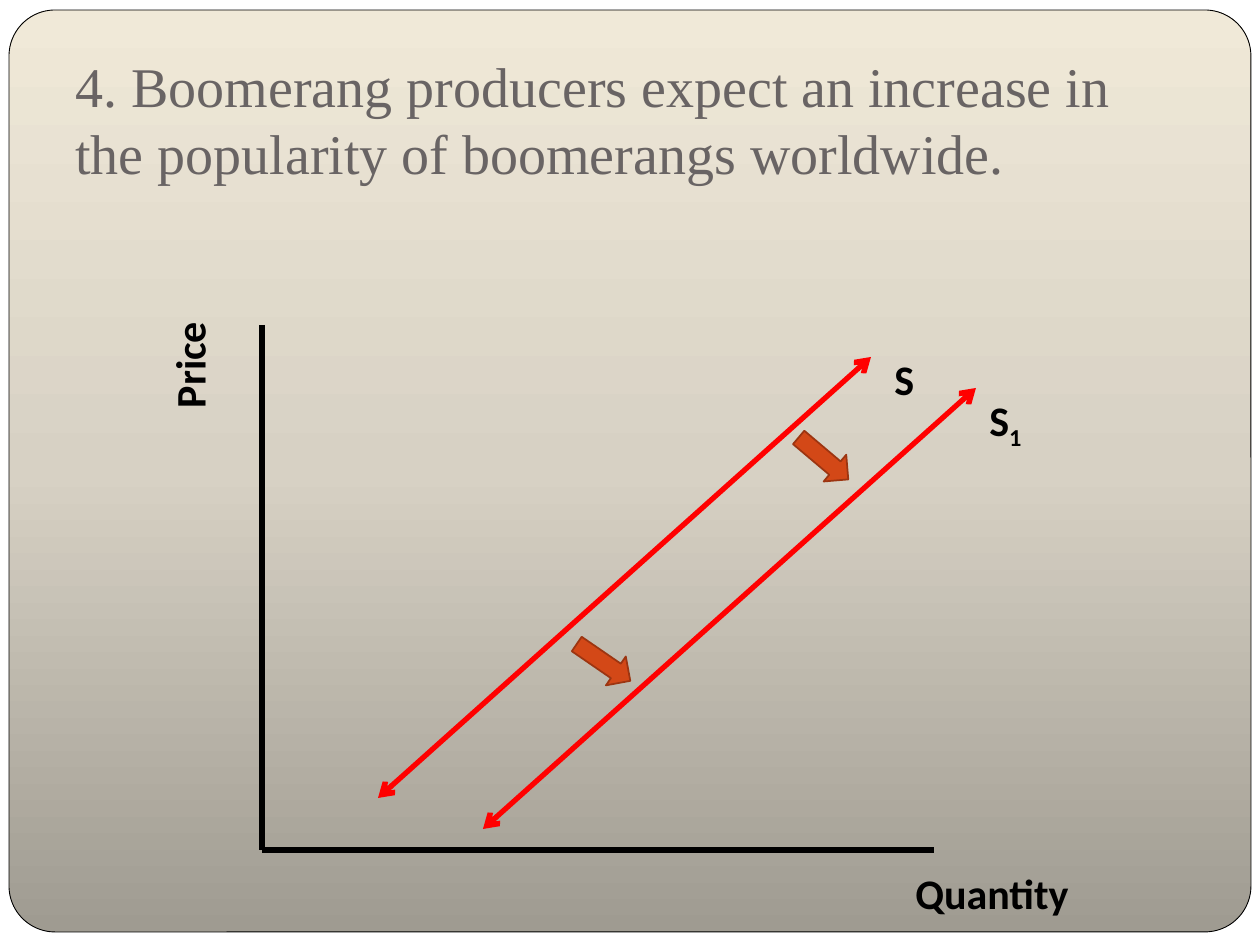
from copy import deepcopy

from pptx import Presentation
from pptx.dml.color import RGBColor
from pptx.enum.shapes import MSO_CONNECTOR, MSO_SHAPE
from pptx.enum.text import MSO_ANCHOR
from pptx.oxml.ns import qn
from pptx.oxml.xmlchemy import OxmlElement
from pptx.util import Emu, Pt

PX = 914400 / 126
BLACK = RGBColor(0x00, 0x00, 0x00)
RED = RGBColor(0xFF, 0x00, 0x00)
GREY = RGBColor(0x69, 0x64, 0x64)
ORANGE = RGBColor(0xD3, 0x48, 0x17)
RUST = RGBColor(0x9C, 0x35, 0x11)
GRADIENT = [
    (0, RGBColor(0x9F, 0x9B, 0x91)),
    (0.5, RGBColor(0xD7, 0xD1, 0xC4)),
    (1, RGBColor(0xF0, 0xE9, 0xD8)),
]


def px(*values):
    return [Emu(round(v * PX)) for v in values]


def add_text(box, runs, font, size, color, bold=False):
    sp = s.shapes.add_textbox(*px(*box))
    tf = sp.text_frame
    tf.word_wrap = True
    p = tf.paragraphs[0]
    for text, baseline in runs:
        r = p.add_run()
        r.text = text
        r.font.name, r.font.size, r.font.bold = font, Pt(size), bold
        r.font.color.rgb = color
        if baseline:
            r.font._element.set("baseline", str(baseline))
    return sp


prs = Presentation()
prs.slide_width, prs.slide_height = px(1260, 945)
s = prs.slides.add_slide(prs.slide_layouts[6])

# Rounded panel, dark at the bottom
sp = s.shapes.add_shape(MSO_SHAPE.ROUNDED_RECTANGLE, *px(9, 10, 1242, 922))
sp.adjustments[0] = 0.05
sp.shadow.inherit = False
sp.line.color.rgb = BLACK
sp.line.width = Pt(0.5)
sp.fill.gradient()
sp.fill.gradient_angle = 90
stops = sp._element.spPr.find(".//" + qn("a:gsLst"))
stops.insert(1, deepcopy(stops[0]))
for stop, (position, color) in zip(sp.fill.gradient_stops, GRADIENT):
    stop.position = position
    stop.color.rgb = color

# Title
title = "4. Boomerang producers expect an increase in the popularity of boomerangs worldwide."
sp = add_text((63, 42, 1134, 157), [(title, 0)], "Times New Roman", 32, GREY)
sp.text_frame.vertical_anchor = MSO_ANCHOR.BOTTOM
sp.text_frame.margin_bottom = px(13)[0]

# Axes and supply curves
for ends, color, arrows in [
    ((262, 325, 262, 850), BLACK, False),
    ((262, 850, 934, 850), BLACK, False),
    ((378, 798, 871, 357), RED, True),
    ((483, 829, 976, 388), RED, True),
]:
    line = s.shapes.add_connector(MSO_CONNECTOR.STRAIGHT, *px(*ends))
    line.line.color.rgb = color
    line.line.width = Pt(3)
    if arrows:
        for tag in ("a:headEnd", "a:tailEnd"):
            end = OxmlElement(tag)
            end.set("type", "arrow")
            line.line._get_or_add_ln().append(end)
    line._element.spPr.append(OxmlElement("a:effectLst"))

# Axis and curve labels
for box, runs, rotation in [
    ((903, 861, 242, 63), [("Quantity", 0)], 0),
    ((105, 305, 168, 63), [("Price", 0)], 270),
    ((882, 347, 116, 63), [("S", 0)], 0),
    ((977, 388, 116, 63), [("S", 0), ("1", -25000)], 0),
]:
    add_text(box, runs, "Calibri", 24, BLACK, bold=True).rotation = rotation

# Shift arrows
for x, y, rotation in [(791, 441, 40.2), (571, 645, 34.5)]:
    sp = s.shapes.add_shape(MSO_SHAPE.RIGHT_ARROW, *px(x, y, 65, 35))
    sp.rotation = rotation
    sp.shadow.inherit = False
    sp.fill.solid()
    sp.fill.fore_color.rgb = ORANGE
    sp.line.color.rgb = RUST
    sp.line.width = Pt(1)

prs.save("out.pptx")
